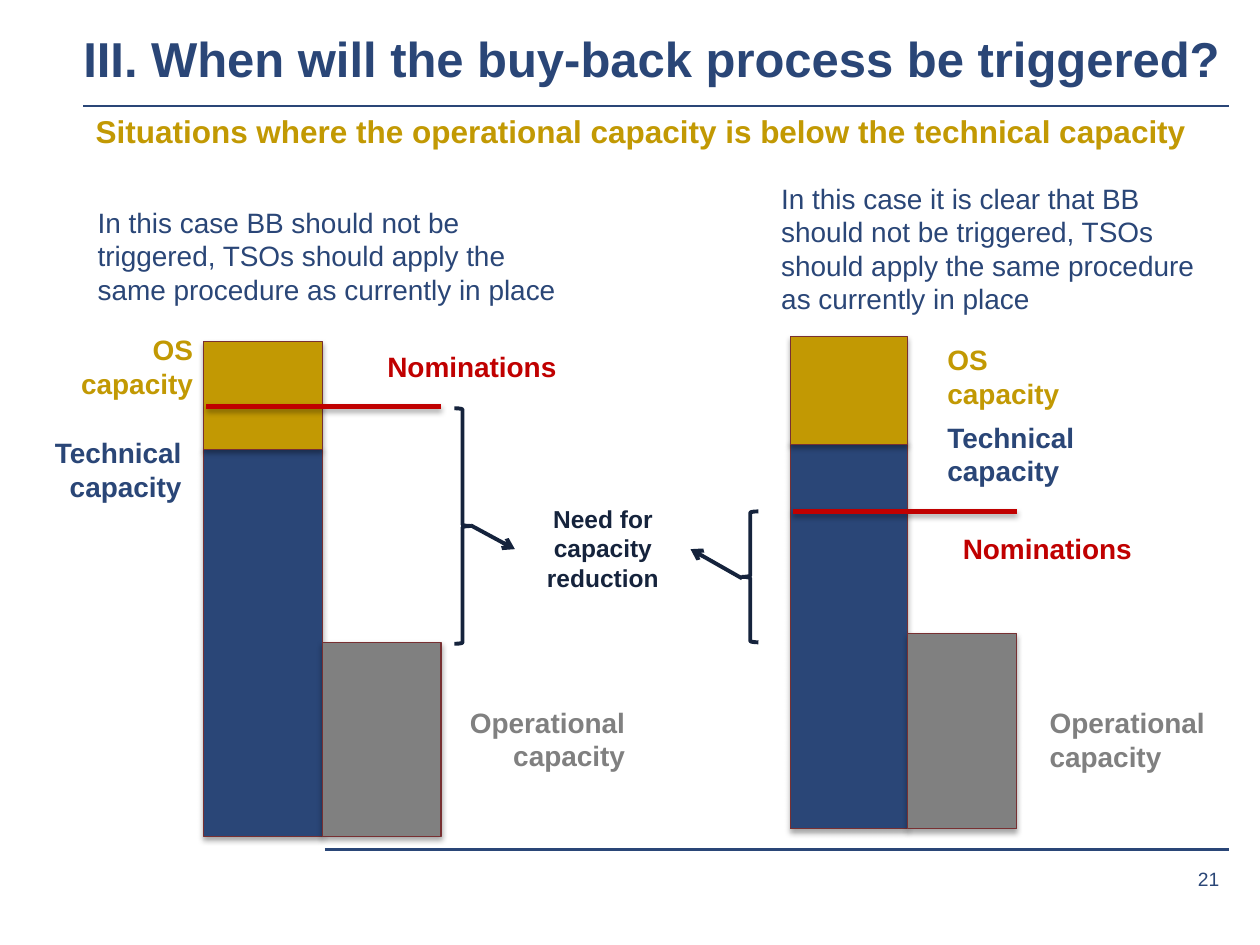
from dataclasses import dataclass

from lxml.etree import SubElement
from pptx import Presentation
from pptx.dml.color import RGBColor
from pptx.enum.shapes import MSO_CONNECTOR, MSO_SHAPE
from pptx.enum.text import MSO_ANCHOR, MSO_AUTO_SIZE, PP_ALIGN
from pptx.oxml.ns import qn
from pptx.util import Cm, Pt

NAVY = RGBColor(0x2A, 0x46, 0x77)
INK = RGBColor(0x15, 0x23, 0x3C)
GOLD = RGBColor(0xC2, 0x99, 0x03)
RED = RGBColor(0xC0, 0x00, 0x00)
GREY = RGBColor(0x80, 0x80, 0x80)
MAROON = RGBColor(0x78, 0x30, 0x32)

LABEL_HEIGHT = 1.63
BRACE_WIDTH = 0.33


@dataclass
class Box:
    """An area in centimetres; parts are placed relative to its corner."""
    left: float
    top: float
    width: float
    height: float

    def inner(self, left, top, width, height):
        return Box(self.left + left, self.top + top, width, height)

    def lengths(self):
        return [Cm(n) for n in (self.left, self.top, self.width, self.height)]


def set_effects(shape, shadow):
    """Replace the theme's shadow by a soft one below, or by none."""
    effects = SubElement(shape.element.spPr, qn("a:effectLst"))
    if shadow:
        outer = SubElement(effects, qn("a:outerShdw"), blurRad="40000",
                           dist="23000", dir="5400000", rotWithShape="0")
        colour = SubElement(outer, qn("a:srgbClr"), val="000000")
        SubElement(colour, qn("a:alpha"), val="35000")


def add_text(page, box, text, size, colour, bold=True, align=PP_ALIGN.LEFT,
             anchor=MSO_ANCHOR.TOP, wrap=True, inset=True):
    shape = page.shapes.add_textbox(*box.lengths())
    frame = shape.text_frame
    frame.word_wrap = wrap
    frame.vertical_anchor = anchor
    if inset:
        frame.auto_size = MSO_AUTO_SIZE.SHAPE_TO_FIT_TEXT
    else:
        frame.margin_left = frame.margin_right = 0
        frame.margin_top = frame.margin_bottom = 0
    para = frame.paragraphs[0]
    para.text = text
    para.alignment = align
    para.font.name = "Arial"
    para.font.size = Pt(size)
    para.font.bold = bold
    para.font.color.rgb = colour


def add_line(page, box, start, end, colour, weight, shadow=False, arrow=False):
    ends = [Cm(n) for x, y in (start, end) for n in (box.left + x, box.top + y)]
    line = page.shapes.add_connector(MSO_CONNECTOR.STRAIGHT, *ends)
    line.line.color.rgb = colour
    line.line.width = Pt(weight)
    if arrow:
        SubElement(line.element.spPr.find(qn("a:ln")), qn("a:tailEnd"), type="arrow")
    set_effects(line, shadow)


def add_bar(page, box, colour):
    bar = page.shapes.add_shape(MSO_SHAPE.RECTANGLE, *box.lengths())
    bar.fill.solid()
    bar.fill.fore_color.rgb = colour
    bar.line.color.rgb = MAROON
    bar.line.width = Pt(0.75)
    set_effects(bar, shadow=True)


def add_brace(page, box, kind):
    brace = page.shapes.add_shape(kind, *box.lengths())
    brace.fill.background()
    brace.line.color.rgb = INK
    brace.line.width = Pt(2.25)
    set_effects(brace, shadow=False)


def draw_header(page, box):
    add_text(page, box.inner(0, 0, 23.72, 1.02),
             "III. When will the buy-back process be triggered?", 28, NAVY,
             anchor=MSO_ANCHOR.BOTTOM, inset=False)
    add_line(page, box, (0, 1.4), (box.width, 1.4), NAVY, 1.5)
    add_text(page, box.inner(0, 1.4, 23.04, 1.02),
             "Situations where the operational capacity is below the technical capacity",
             18, GOLD)


def draw_footer(page, box):
    add_line(page, box, (0, 0), (box.width, 0), NAVY, 1.5)
    add_text(page, box.inner(16.05, 0.2, 1.98, 0.79), "21", 11, NAVY, bold=False,
             align=PP_ALIGN.RIGHT, anchor=MSO_ANCHOR.MIDDLE, inset=False)


def draw_case(page, box, bar_width, technical_top, operational_top, nominations,
              note, note_place, labels, align, brace_kind, brace_place, arrow):
    """Stacked capacity bar, operational bar, nominations line and labels.

    The box spans both bars; every place is relative to its top left corner.
    """
    # Bars and nominations line
    add_bar(page, box.inner(0, technical_top, bar_width, box.height - technical_top), NAVY)
    add_bar(page, box.inner(0, 0, bar_width, 2.18), GOLD)
    add_line(page, box, (0.05, nominations), (box.width, nominations), RED, 3, shadow=True)
    add_bar(page, box.inner(bar_width, operational_top, box.width - bar_width,
                            box.height - operational_top), GREY)

    # Note above and labels beside the bars
    add_text(page, box.inner(*note_place), note, 16, NAVY, bold=False)
    names = (("OS capacity", GOLD), ("Technical capacity", NAVY),
             ("Operational capacity", GREY))
    for (name, colour), (left, top, width) in zip(names, labels):
        add_text(page, box.inner(left, top, width, LABEL_HEIGHT), name, 16, colour,
                 align=align)
    left, top, width = labels[-1]
    add_text(page, box.inner(left, top, width, 0.94), "Nominations", 16, RED,
             align=PP_ALIGN.RIGHT, wrap=False)

    # Gap between nominations and operational capacity
    left, top, height = brace_place
    add_brace(page, box.inner(left, top, BRACE_WIDTH, height), brace_kind)
    add_line(page, box, *arrow, INK, 2.25, arrow=True)


def main():
    deck = Presentation()
    deck.slide_width, deck.slide_height = Cm(25.4), Cm(19.05)
    page = deck.slides.add_slide(deck.slide_layouts[6])

    draw_header(page, Box(1.68, 0.74, 23.09, 2.42))
    draw_footer(page, Box(6.55, 17.12, 18.22, 1))

    # Labels: OS, technical, operational, nominations as (left, top, width)
    draw_case(
        page, Box(4.11, 6.88, 4.78, 9.98), bar_width=2.39, technical_top=2.16,
        operational_top=6.07, nominations=1.32,
        note="In this case BB should not be triggered, TSOs should apply the "
             "same procedure as currently in place",
        note_place=(-2.39, -2.87, 10.16, 2.31),
        labels=((-3.3, -0.3, 3.33), (-3.73, 1.78, 3.53), (4.7, 7.21, 4.04),
                (3.4, 0.05, 3.96)),
        align=PP_ALIGN.RIGHT, brace_kind=MSO_SHAPE.RIGHT_BRACE,
        brace_place=(5.05, 1.35, 4.75), arrow=((5.38, 3.71), (6.27, 4.19)))
    draw_case(
        page, Box(15.93, 6.78, 4.57, 9.93), bar_width=2.36, technical_top=2.13,
        operational_top=5.99, nominations=3.53,
        note="In this case it is clear that BB should not be triggered, TSOs "
             "should apply the same procedure as currently in place",
        note_place=(-0.43, -3.25, 8.94, 3),
        labels=((2.92, 0, 3.33), (2.92, 1.57, 3.53), (4.98, 7.32, 3.81),
                (3.18, 3.81, 3.96)),
        align=PP_ALIGN.LEFT, brace_kind=MSO_SHAPE.LEFT_BRACE,
        brace_place=(-0.97, 3.53, 2.64), arrow=((-0.97, 4.88), (-2.01, 4.29)))

    # Shared caption between the two cases
    add_text(page, Box(10.39, 10.03, 3.53, 2.06), "Need for capacity reduction", 14, INK,
             align=PP_ALIGN.CENTER)
    deck.save("out.pptx")


if __name__ == "__main__":
    main()
